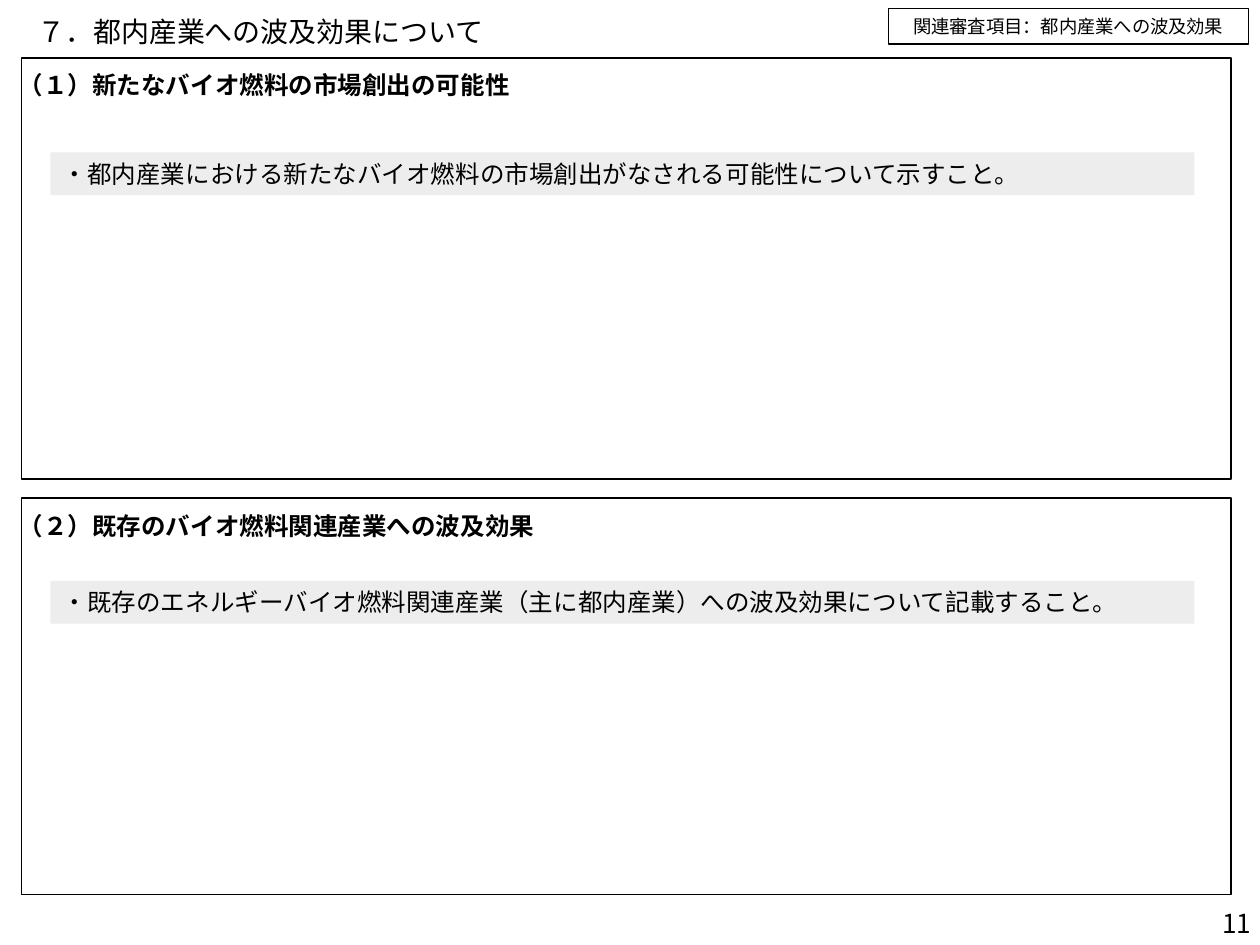
import dataclasses

import lxml.etree
import pptx
import pptx.dml.color
import pptx.enum.shapes
import pptx.enum.text
import pptx.oxml.ns
import pptx.util
from pptx.util import Inches

FONT = "Noto Sans CJK JP"
BLACK = "000000"
NOTE_GREY = "EDEDED"
ALIGN = pptx.enum.text.PP_ALIGN
ANCHOR = pptx.enum.text.MSO_ANCHOR
AUTO_SIZE = pptx.enum.text.MSO_AUTO_SIZE


@dataclasses.dataclass(frozen=True)
class Box:
    left: float
    top: float
    width: float
    height: float

    def lengths(self):
        return [Inches(value) for value in dataclasses.astuple(self)]


@dataclasses.dataclass(frozen=True)
class Section:
    heading: str
    note: str
    top: float
    height: float
    heading_top: float
    note_top: float


SECTIONS = [
    Section(
        "（１）新たなバイオ燃料の市場創出の可能性",
        "・都内産業における新たなバイオ燃料の市場創出がなされる可能性について示すこと。",
        top=0.46, height=3.34, heading_top=0.51, note_top=1.21,
    ),
    Section(
        "（２）既存のバイオ燃料関連産業への波及効果",
        "・既存のエネルギーバイオ燃料関連産業（主に都内産業）への波及効果について記載すること。",
        top=3.95, height=3.15, heading_top=4.01, note_top=4.61,
    ),
]


def color(value: str) -> pptx.dml.color.RGBColor:
    return pptx.dml.color.RGBColor.from_string(value)


def write_text(shape, text: str, *, size: float, bold: bool = False,
               align=ALIGN.LEFT, anchor=ANCHOR.TOP, auto_size=AUTO_SIZE.SHAPE_TO_FIT_TEXT,
               line_spacing: float = 1.0, side_margin: float = 0.1,
               end_margin: float = 0.05) -> None:
    frame = shape.text_frame
    frame.word_wrap = True
    frame.auto_size = auto_size
    frame.vertical_anchor = anchor
    frame.margin_left = frame.margin_right = Inches(side_margin)
    frame.margin_top = frame.margin_bottom = Inches(end_margin)
    paragraph = frame.paragraphs[0]
    paragraph.alignment = align
    paragraph.line_spacing = line_spacing
    run = paragraph.add_run()
    run.text = text
    run.font.size = pptx.util.Pt(size)
    run.font.bold = bold
    run.font.color.rgb = color(BLACK)
    run.font.name = FONT
    east_asian = lxml.etree.SubElement(run.font._element, pptx.oxml.ns.qn("a:ea"))
    east_asian.set("typeface", FONT)


def add_text(slide, box: Box, text: str, **text_format):
    shape = slide.shapes.add_textbox(*box.lengths())
    write_text(shape, text, **text_format)
    return shape


def add_rectangle(slide, box: Box, *, fill: str = "", line_width: float = 0):
    """Add a rectangle; an empty fill or a zero line width leaves that part out."""
    shape = slide.shapes.add_shape(
        pptx.enum.shapes.MSO_SHAPE.RECTANGLE, *box.lengths())
    shape.shadow.inherit = False
    if fill:
        shape.fill.solid()
        shape.fill.fore_color.rgb = color(fill)
    else:
        shape.fill.background()
    if line_width:
        shape.line.color.rgb = color(BLACK)
        shape.line.width = pptx.util.Pt(line_width)
    else:
        shape.line.fill.background()
    return shape


def add_section(slide, section: Section) -> None:
    add_rectangle(slide, Box(0.17, section.top, 9.6, section.height), line_width=1)
    add_text(slide, Box(0.05, section.heading_top, 6.31, 0.35),
             section.heading, size=14, bold=True)
    note = add_rectangle(slide, Box(0.4, section.note_top, 9.08, 0.34), fill=NOTE_GREY)
    write_text(note, section.note, size=14)


def main() -> None:
    presentation = pptx.Presentation()
    presentation.slide_width = Inches(10)
    presentation.slide_height = Inches(7.5)
    slide = presentation.slides.add_slide(presentation.slide_layouts[6])

    add_text(slide, Box(8.25, 7.25, 1.75, 0.15), "11", size=15, align=ALIGN.RIGHT,
             anchor=ANCHOR.MIDDLE, auto_size=AUTO_SIZE.NONE,
             side_margin=0.07, end_margin=0.04)
    add_text(slide, Box(0.2, 0.08, 9.44, 0.37), "７．都内産業への波及効果について",
             size=16, anchor=ANCHOR.MIDDLE, auto_size=AUTO_SIZE.NONE, line_spacing=0.9)
    for section in SECTIONS:
        add_section(slide, section)
    review_item = add_rectangle(slide, Box(7.05, 0.07, 2.86, 0.28), line_width=0.75)
    write_text(review_item, "関連審査項目：都内産業への波及効果", size=10.5, align=ALIGN.CENTER)

    presentation.save("out.pptx")


if __name__ == "__main__":
    main()
